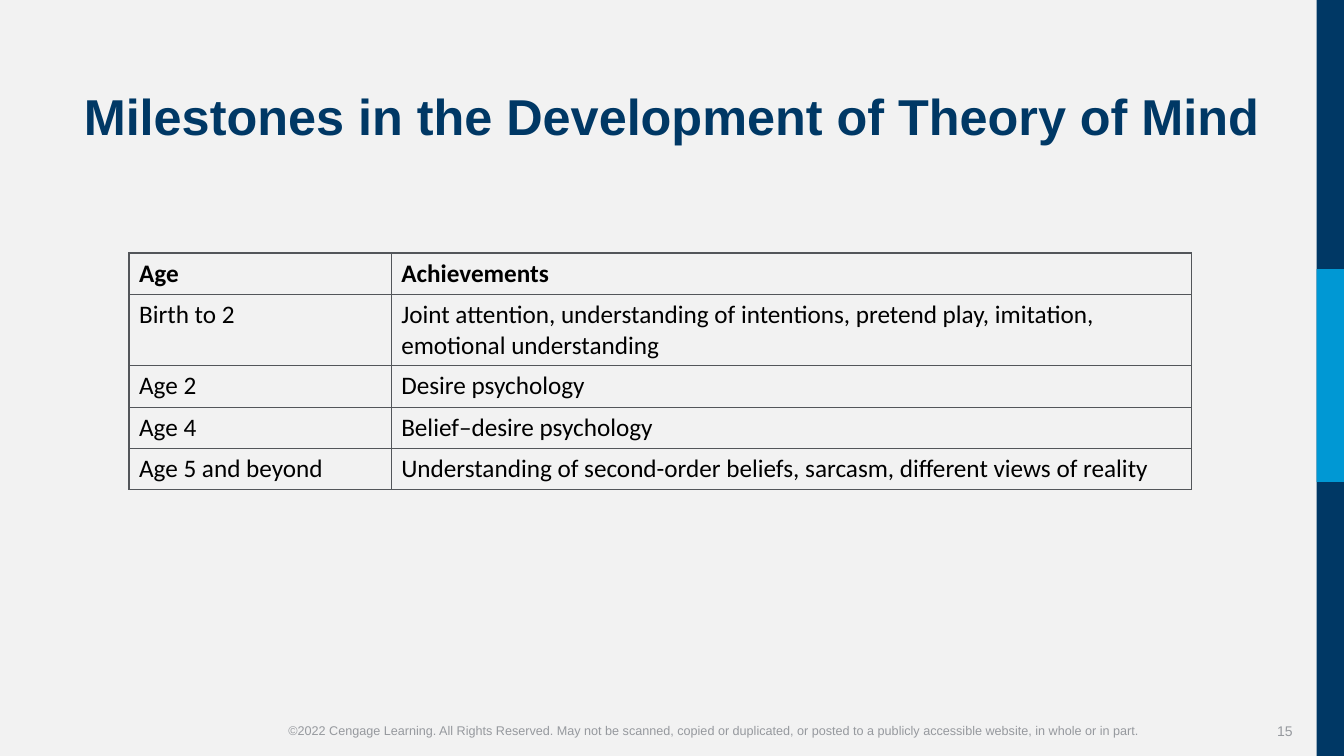
from lxml import etree
from pptx import Presentation
from pptx import util as u
from pptx.dml.color import RGBColor
from pptx.enum import text as t
from pptx.enum import shapes as s
from pptx.oxml.ns import qn

NAVY, BLUE, GREY, LINE, PAPER = "003865", "0098D4", "96999E", "53565A", "F2F2F2"
ROWS = [
    ("Age", "Achievements"),
    ("Birth to 2", "Joint attention, understanding of intentions, pretend play, "
                   "imitation, emotional understanding"),
    ("Age 2", "Desire psychology"),
    ("Age 4", "Belief–desire psychology"),
    ("Age 5 and beyond", "Understanding of second-order beliefs, sarcasm, "
                         "different views of reality"),
]
NOTICE = ("©2022 Cengage Learning. All Rights Reserved. May not be scanned, copied or "
          "duplicated, or posted to a publicly accessible website, in whole or in part.")


def rgb(code):
    return RGBColor.from_string(code)


def place(box):
    return [u.Inches(n) for n in box]


def write(frame, words, size, color, face="Arial", bold=False, align=None):
    frame.text = words
    para = frame.paragraphs[0]
    para.alignment = align
    font = para.runs[0].font
    font.name, font.size, font.bold = face, u.Pt(size), bold
    font.color.rgb = rgb(color)
    return para


# Side band: navy strip with a bright middle part
def band(slide, box):
    left, top, wide, high = box
    for y, tall, color in ((top, high, NAVY), (top + 2.67, 2.11, BLUE)):
        bar = slide.shapes.add_shape(s.MSO_SHAPE.RECTANGLE, *place((left, y, wide, tall)))
        bar.shadow.inherit = False
        bar.fill.solid()
        bar.fill.fore_color.rgb = rgb(color)
        bar.line.fill.background()


# Footer: notice and page number
def footer(slide, box):
    left, top, wide, high = box
    parts = (
        ((left, top + 0.07, 10.51, 0.25), NOTICE, 9, t.PP_ALIGN.CENTER),
        ((left + wide - 0.8, top, 0.8, high), "15", 10, t.PP_ALIGN.RIGHT),
    )
    for area, words, size, align in parts:
        frame = slide.shapes.add_textbox(*place(area)).text_frame
        frame.word_wrap = True
        frame.vertical_anchor = t.MSO_ANCHOR.MIDDLE
        write(frame, words, size, GREY, align=align)


# Title placeholder
def title(slide, box):
    head = slide.shapes.title
    head.left, head.top, head.width, head.height = place(box)
    frame = head.text_frame
    frame.word_wrap = True
    frame.auto_size = t.MSO_AUTO_SIZE.NONE
    frame.vertical_anchor = t.MSO_ANCHOR.MIDDLE
    para = write(frame, "Milestones in the Development of Theory of Mind", 36, NAVY,
                 bold=True, align=t.PP_ALIGN.CENTER)
    para.line_spacing = 0.9


def border(cell):
    props = cell._tc.get_or_add_tcPr()
    for i, side in enumerate(("lnL", "lnR", "lnT", "lnB")):
        edge = etree.Element(qn("a:" + side), w=str(u.Pt(1)))
        fill = etree.SubElement(edge, qn("a:solidFill"))
        etree.SubElement(fill, qn("a:srgbClr"), val=LINE)
        props.insert(i, edge)


# Milestones table
def grid(slide, box):
    table = slide.shapes.add_table(len(ROWS), 2, *place(box)).table
    table.first_row = table.horz_banding = False
    first = 2.6
    for col, wide in zip(table.columns, (first, box[2] - first)):
        col.width = u.Inches(wide)
    for r, row in enumerate(ROWS):
        table.rows[r].height = u.Inches(0.71 if r == 1 else 0.41)
        for c, words in enumerate(row):
            cell = table.cell(r, c)
            cell.fill.background()
            border(cell)
            write(cell.text_frame, words, 18, "000000", "Calibri", bold=r == 0)


def main():
    deck = Presentation()
    deck.slide_width, deck.slide_height = u.Inches(13.33), u.Inches(7.5)
    slide = deck.slides.add_slide(deck.slide_layouts[5])
    slide.background.fill.solid()
    slide.background.fill.fore_color.rgb = rgb(PAPER)
    footer(slide, (1.82, 7.05, 11.1, 0.4))
    band(slide, (13.06, 0, 0.27, 7.5))
    title(slide, (0.52, 0.52, 12.29, 1.33))
    grid(slide, (1.28, 2.51, 10.54, 2.35))
    deck.save("out.pptx")


if __name__ == "__main__":
    main()
